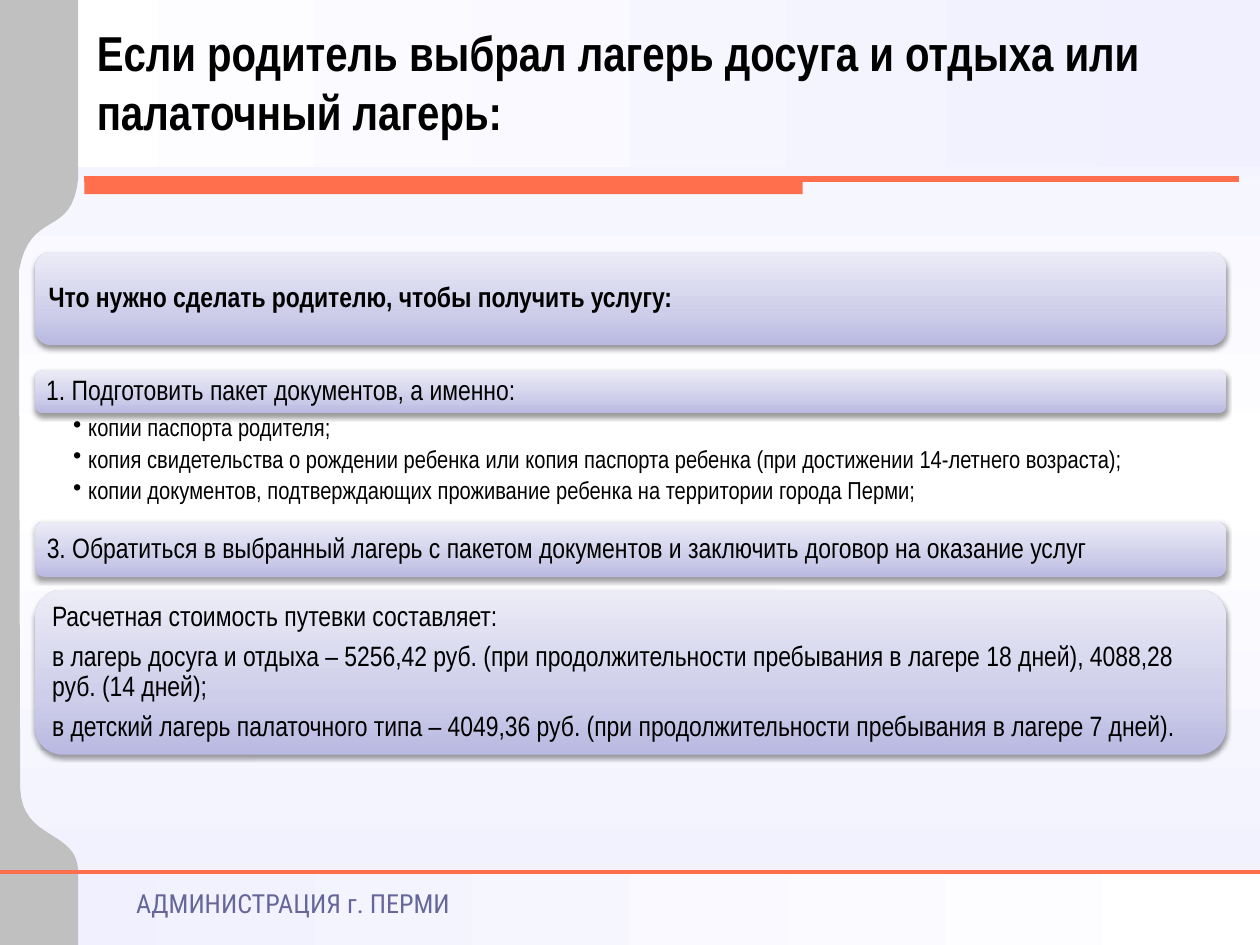
from dataclasses import dataclass

from lxml.etree import SubElement
from pptx import Presentation
from pptx.dml.color import RGBColor
from pptx.enum.shapes import MSO_CONNECTOR as Connector, MSO_SHAPE as Shape
from pptx.enum.text import MSO_ANCHOR as Anchor, PP_ALIGN as Align
from pptx.oxml.ns import qn
from pptx.util import Inches, Pt


@dataclass(frozen=True)
class Theme:
    ink: str = "000000"
    accent: str = "FF6F4D"
    ribbon: str = "C0C0C0"
    footer: str = "666699"
    pale: str = "F0F0FF"
    white: str = "FFFFFF"
    card: tuple = ((0, "B9B9E2"), (35, "CECEEA"), (100, "ECECF7"))
    font: str = "Arial Narrow"
    footer_font: str = "Roboto Condensed"
    title_size: int = 28
    card_size: int = 16
    bullet_size: int = 14
    footer_size: int = 15


THEME = Theme()
WIDTH, HEIGHT = 10, 7.5
FOOTER_TOP = 6.92
CARD_LEFT, CARD_WIDTH = 0.28, 9.45

TITLE = "Если родитель выбрал лагерь досуга и отдыха или палаточный лагерь:"
DOCUMENTS = [
    "копии паспорта родителя;",
    "копия свидетельства о рождении ребенка или копия паспорта ребенка (при достижении 14-летнего возраста);",
    "копии документов, подтверждающих проживание ребенка на территории города Перми;",
]
# top, height, bold, paragraphs
CARDS = [
    (2, 0.74, True, ["Что нужно сделать родителю, чтобы получить услугу:"]),
    (2.94, 0.34, False, ["1. Подготовить пакет документов, а именно:"]),
    (4.14, 0.44, False, [
        "3. Обратиться в выбранный лагерь с пакетом документов и заключить договор на оказание услуг"]),
    (4.68, 1.31, False, [
        "Расчетная стоимость путевки составляет:",
        "в лагерь досуга и отдыха – 5256,42 руб. (при продолжительности пребывания в лагере 18 дней), "
        "4088,28 руб. (14 дней);",
        "в детский лагерь палаточного типа – 4049,36 руб. (при продолжительности пребывания в лагере 7 дней).",
    ]),
]


def inches(*values):
    return [Inches(value) for value in values]


def apply(target, values):
    for name, value in values.items():
        setattr(target, name, value)


def set_gradient(fill, owner, stops, angle):
    """Fill with any number of (percent, colour) stops; angle is counter-clockwise."""
    fill.gradient()
    fill.gradient_angle = angle
    stop_list = owner.xpath(".//a:gsLst")[0]
    for old in list(stop_list):
        stop_list.remove(old)
    for percent, color in stops:
        stop = SubElement(stop_list, qn("a:gs"), pos=str(percent * 1000))
        SubElement(stop, qn("a:srgbClr"), val=color)


def set_solid(shape, color):
    shape.shadow.inherit = False
    shape.fill.solid()
    shape.fill.fore_color.rgb = RGBColor.from_string(color)
    shape.line.fill.background()


def add_panel(slide, box, kind, stops, angle):
    panel = slide.shapes.add_shape(kind, *inches(*box))
    panel.shadow.inherit = False
    set_gradient(panel.fill, panel.element, stops, angle)
    panel.line.fill.background()
    return panel


def add_rule(slide, left, right, y, weight):
    rule = slide.shapes.add_connector(Connector.STRAIGHT, *inches(left, y, right, y))
    rule.line.color.rgb = RGBColor.from_string(THEME.accent)
    rule.line.width = Pt(weight)
    SubElement(rule.element.spPr, qn("a:effectLst"))


def add_bullet(para, indent):
    props = para._p.get_or_add_pPr()
    props.set("marL", str(Inches(indent)))
    props.set("indent", str(-Inches(indent)))
    SubElement(props, qn("a:buChar"), char="•")


def write(shape, lines, margins, size, anchor=Anchor.TOP, font=THEME.font,
          color=THEME.ink, bold=False, bullet=0, spacing=None):
    """Write one paragraph per line; margins run left, top, right, bottom."""
    frame = shape.text_frame
    sides = ("margin_left", "margin_top", "margin_right", "margin_bottom")
    apply(frame, dict(zip(sides, inches(*margins)), word_wrap=True, vertical_anchor=anchor))
    for index, line in enumerate(lines):
        para = frame.add_paragraph() if index else frame.paragraphs[0]
        if bullet:
            add_bullet(para, bullet)
        apply(para, {"alignment": Align.LEFT, **(spacing or {})})
        span = para.add_run()
        span.text = line
        apply(span.font, {"name": font, "size": Pt(size), "bold": bold})
        span.font.color.rgb = RGBColor.from_string(color)


def list_spacing(size, share):
    return {"line_spacing": 0.9, "space_after": Pt(size * share)}


def curve(start, control_a, control_b, end, steps=16):
    """Points along a cubic curve, without its start."""
    points = []
    for step in range(1, steps + 1):
        t = step / steps
        weights = ((1 - t) ** 3, 3 * t * (1 - t) ** 2, 3 * t * t * (1 - t), t ** 3)
        corners = (start, control_a, control_b, end)
        points.append(tuple(sum(w * c[axis] for w, c in zip(weights, corners)) for axis in (0, 1)))
    return points


def add_ribbon(slide, box):
    """Grey side strip that narrows between two curved shoulders."""
    left, top, width, height = box
    right, bottom = left + width, top + height
    waist = left + 0.15
    points = [(right, top), (left, top), (left, bottom), (right, bottom), (right, FOOTER_TOP)]
    points += curve((right, FOOTER_TOP), (right, 6.58), (waist + 0.02, 6.68), (waist + 0.01, 6.25))
    points.append((waist, 2.15))
    points += curve((waist, 2.15), (0.24, 1.65), (0.57, 1.9), (right, 1.42))
    outline = [inches(*point) for point in points]
    builder = slide.shapes.build_freeform(*outline[0], scale=1.0)
    builder.add_line_segments(outline[1:], close=True)
    set_solid(builder.convert_to_shape(), THEME.ribbon)


def add_backdrop(slide):
    pale, white = THEME.pale, THEME.white
    set_gradient(slide.background.fill, slide.element, ((0, pale), (50, white), (100, pale)), 270)
    add_panel(slide, (0, 0, WIDTH, 1.33), Shape.RECTANGLE, ((0, white), (100, pale)), 0)
    add_panel(slide, (0, FOOTER_TOP, WIDTH, HEIGHT - FOOTER_TOP), Shape.RECTANGLE,
              ((0, pale), (100, white)), 0)
    add_ribbon(slide, (0, 0, 0.62, HEIGHT))


def add_title(slide, box):
    title = slide.shapes.add_textbox(*inches(*box))
    write(title, [TITLE], (0.1, 0.05, 0.1, 0.05), THEME.title_size, bold=True)


def add_divider(slide, box):
    left, top, width, height = box
    bar = slide.shapes.add_shape(Shape.RECTANGLE, *inches(left, top, 5.7, height))
    set_solid(bar, THEME.accent)
    add_rule(slide, left, left + width, top, 3)


def add_footer(slide, box):
    add_rule(slide, 0, WIDTH, FOOTER_TOP, 2.25)
    footer = slide.shapes.add_textbox(*inches(*box))
    write(footer, ["АДМИНИСТРАЦИЯ г. ПЕРМИ"], (0, 0.05, 0, 0.05), THEME.footer_size,
          font=THEME.footer_font, color=THEME.footer)


def add_card(slide, box, lines, bold):
    card = add_panel(slide, box, Shape.ROUNDED_RECTANGLE, THEME.card, 90)
    effects = card.element.spPr.find(qn("a:effectLst"))
    shadow = SubElement(effects, qn("a:outerShdw"), blurRad=str(Pt(3.1)), dist=str(Pt(1.6)),
                        dir="5400000", rotWithShape="0")
    color = SubElement(shadow, qn("a:srgbClr"), val=THEME.ink)
    SubElement(color, qn("a:alpha"), val="38000")
    write(card, lines, (0.07,) * 4, THEME.card_size, anchor=Anchor.MIDDLE, bold=bold,
          spacing=list_spacing(THEME.card_size, 0.35))


def add_documents(slide, box):
    documents = slide.shapes.add_textbox(*inches(*box))
    write(documents, DOCUMENTS, (0.3, 0.02, 0.11, 0.02), THEME.bullet_size, bullet=0.12,
          spacing={"level": 1, **list_spacing(THEME.bullet_size, 0.2)})


def main():
    deck = Presentation()
    apply(deck, {"slide_width": Inches(WIDTH), "slide_height": Inches(HEIGHT)})
    page = deck.slides.add_slide(deck.slide_layouts[6])
    add_backdrop(page)
    add_divider(page, (0.67, 1.42, 9.16, 0.12))
    add_footer(page, (1.08, 6.99, 3.5, 0.35))
    add_title(page, (0.67, 0.13, 9.13, 1.04))
    for top, height, bold, lines in CARDS:
        add_card(page, (CARD_LEFT, top, CARD_WIDTH, height), lines, bold)
    add_documents(page, (CARD_LEFT, 3.28, CARD_WIDTH, 0.86))
    deck.save("out.pptx")


if __name__ == "__main__":
    main()
